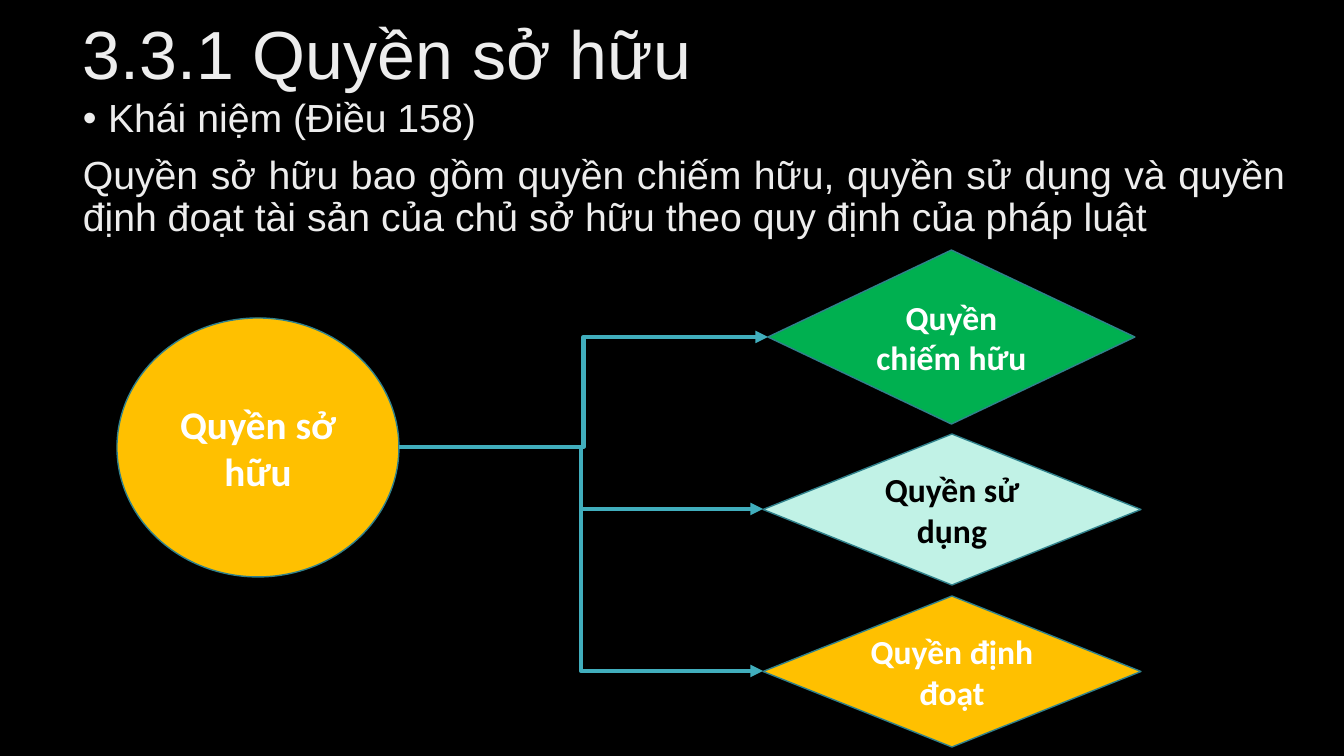
from dataclasses import dataclass

from lxml.etree import SubElement
from pptx import Presentation
from pptx.dml.color import RGBColor
from pptx.enum.shapes import MSO_CONNECTOR, MSO_SHAPE
from pptx.enum.text import MSO_ANCHOR, PP_ALIGN
from pptx.oxml.ns import qn
from pptx.util import Emu, Pt

SCALE = 914400 / 100.8
COLORS = {
    "back": "000000",
    "text": "EDEDED",
    "white": "FFFFFF",
    "black": "000000",
    "gold": "FFC000",
    "green": "00B050",
    "mint": "C1F2E6",
    "edge": "30818C",
    "link": "41AEBD",
}


@dataclass(frozen=True)
class Node:
    text: str
    left: int
    top: int
    width: int
    height: int
    fill: str
    ink: str = "white"
    size: int = 24
    kind: MSO_SHAPE = MSO_SHAPE.FLOWCHART_DECISION

    @property
    def middle(self) -> int:
        return self.top + self.height // 2


OWNER = Node("Quyền sở hữu", 117, 318, 282, 259, "gold", size=28, kind=MSO_SHAPE.OVAL)
RIGHTS = [
    Node("Quyền chiếm hữu", 768, 250, 367, 174, "green"),
    Node("Quyền sử dụng", 763, 434, 378, 151, "mint", ink="black"),
    Node("Quyền định đoạt", 763, 596, 378, 151, "gold"),
]


def px(count: int) -> Emu:
    return Emu(round(count * SCALE))


def color(name: str) -> RGBColor:
    return RGBColor.from_string(COLORS[name])


def write(par, text: str, *, size: float, ink: str = "text", font: str = "Arial",
          bold: bool = False, align=PP_ALIGN.LEFT, line: float = 1.0,
          before: int = 0, bullet: bool = False) -> None:
    par.alignment = align
    par.line_spacing = line
    par.space_before = Pt(before)
    if bullet:
        props = par._p.get_or_add_pPr()
        props.set("marL", "228600")
        props.set("indent", "-228600")
        SubElement(props, qn("a:buFont")).set("typeface", "Arial")
        SubElement(props, qn("a:buChar")).set("char", "•")
    run = par.add_run()
    run.text = text
    run.font.name = font
    run.font.size = Pt(size)
    run.font.bold = bold
    run.font.color.rgb = color(ink)


def add_box(slide, left: int, top: int, width: int, height: int, anchor):
    box = slide.shapes.add_textbox(px(left), px(top), px(width), px(height))
    frame = box.text_frame
    frame.word_wrap = True
    frame.vertical_anchor = anchor
    return frame


def add_node(slide, node: Node) -> None:
    shape = slide.shapes.add_shape(
        node.kind, px(node.left), px(node.top), px(node.width), px(node.height))
    shape.shadow.inherit = False
    shape.fill.solid()
    shape.fill.fore_color.rgb = color(node.fill)
    shape.line.color.rgb = color("edge")
    shape.line.width = Pt(1)
    frame = shape.text_frame
    frame.word_wrap = True
    frame.vertical_anchor = MSO_ANCHOR.MIDDLE
    write(frame.paragraphs[0], node.text, size=node.size, ink=node.ink,
          font="Calibri", bold=True, align=PP_ALIGN.CENTER)


def add_link(slide, start: Node, end: Node) -> None:
    link = slide.shapes.add_connector(
        MSO_CONNECTOR.ELBOW, px(start.left + start.width), px(start.middle),
        px(end.left), px(end.middle))
    link.line.color.rgb = color("link")
    link.line.width = Pt(3)
    SubElement(link.line._get_or_add_ln(), qn("a:tailEnd")).set("type", "triangle")
    SubElement(link._element.spPr, qn("a:effectLst"))


def main() -> None:
    deck = Presentation()
    deck.slide_width = px(1344)
    deck.slide_height = px(756)
    slide = deck.slides.add_slide(deck.slide_layouts[6])
    slide.background.fill.solid()
    slide.background.fill.fore_color.rgb = color("back")

    title = add_box(slide, 73, 15, 1159, 84, MSO_ANCHOR.MIDDLE)
    write(title.paragraphs[0], "3.3.1 Quyền sở hữu", size=48.6, line=0.9)

    body = add_box(slide, 73, 94, 1222, 165, MSO_ANCHOR.TOP)
    write(body.paragraphs[0], "Khái niệm (Điều 158)", size=28, line=0.9, bullet=True)
    write(body.add_paragraph(),
          "Quyền sở hữu bao gồm quyền chiếm hữu, quyền sử dụng và quyền "
          "định đoạt tài sản của chủ sở hữu theo quy định của pháp luật",
          size=28, line=0.9, before=10, align=PP_ALIGN.JUSTIFY)

    for node in [OWNER, *RIGHTS]:
        add_node(slide, node)
    for right in RIGHTS:
        add_link(slide, OWNER, right)

    deck.save("out.pptx")


if __name__ == "__main__":
    main()
